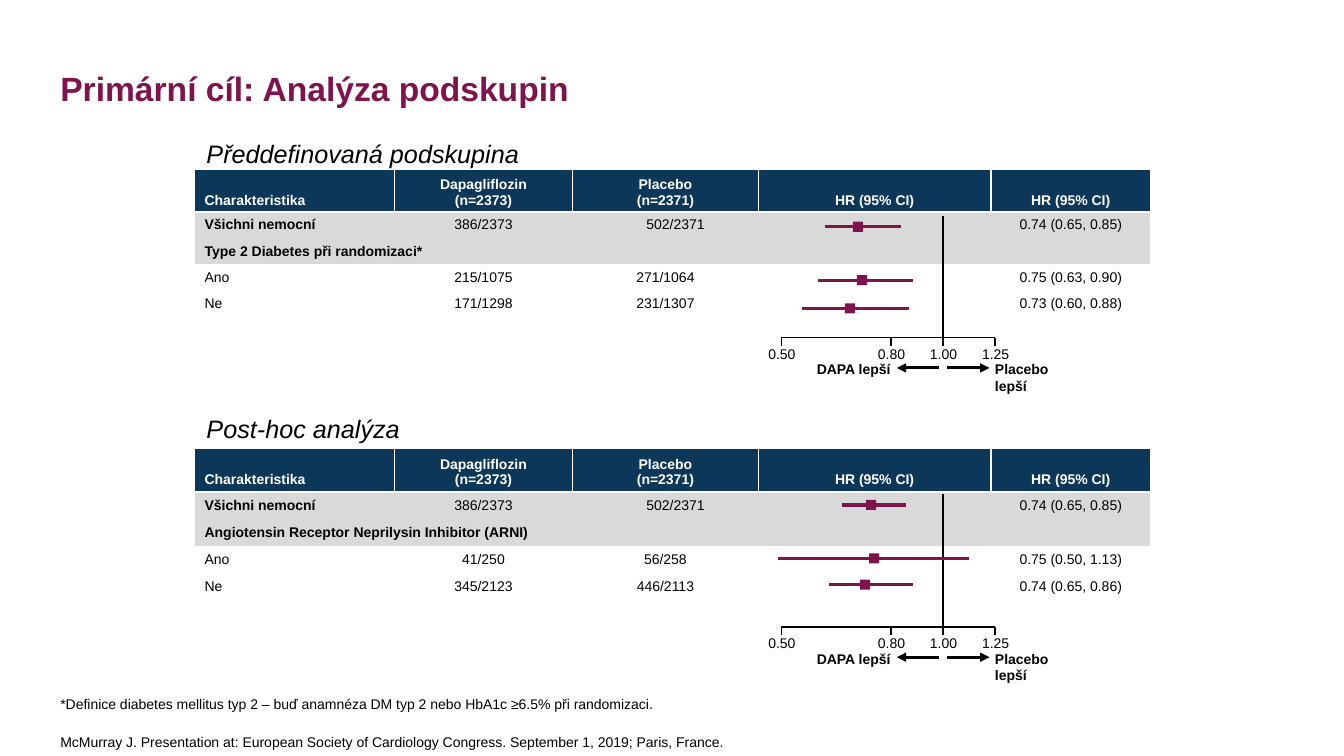
import math
from pptx import Presentation
from pptx.dml.color import RGBColor
from pptx.enum.shapes import MSO_CONNECTOR, MSO_SHAPE
from pptx.enum.text import MSO_ANCHOR, PP_ALIGN
from pptx.oxml.ns import qn
from pptx.util import Inches, Pt
from lxml import etree

STRAIGHT, RECTANGLE = MSO_CONNECTOR.STRAIGHT, MSO_SHAPE.RECTANGLE
TOP, MIDDLE, BOTTOM = MSO_ANCHOR.TOP, MSO_ANCHOR.MIDDLE, MSO_ANCHOR.BOTTOM
LEFT, CENTER, RIGHT = PP_ALIGN.LEFT, PP_ALIGN.CENTER, PP_ALIGN.RIGHT
BLACK = RGBColor(0x00, 0x00, 0x00)
WHITE = RGBColor(0xFF, 0xFF, 0xFF)
PLUM = RGBColor(0x7F, 0x13, 0x4C)
NAVY = RGBColor(0x0D, 0x37, 0x59)
GREY = RGBColor(0xD9, 0xD9, 0xD9)
FONT = "Arial"
PLAIN_TABLE = "{2D5ABB26-0587-4C30-8999-92F81FD0307C}"

TITLE = "Primární cíl: Analýza podskupin"
NOTES = [
    "*Definice diabetes mellitus typ 2 – buď anamnéza DM typ 2 nebo HbA1c ≥6.5% při randomizaci.",
    "McMurray J. Presentation at: European Society of Cardiology Congress. September 1, 2019; Paris, France.",
]
HEADER = ["Charakteristika", "Dapagliflozin\n(n=2373)", "Placebo\n(n=2371)",
          "HR (95% CI)", "", "HR (95% CI)"]
ALL_PATIENTS = ["Všichni nemocní", "386/2373", "502/2371", "", "", "0.74 (0.65, 0.85)"]
PANELS = [
    {
        "heading": "Předdefinovaná podskupina", "heading_top": 1.32,
        "top": 1.69, "rows": [0.4] + [0.26] * 4, "axis": 3.35,
        "group": "Type 2 Diabetes při randomizaci*",
        "results": [["Ano", "215/1075", "271/1064", "", "", "0.75 (0.63, 0.90)"],
                    ["Ne", "171/1298", "231/1307", "", "", "0.73 (0.60, 0.88)"]],
        "intervals": [(8.18, 8.51, 8.94, 2.25), (8.11, 8.55, 9.06, 2.78),
                      (7.95, 8.43, 9.02, 3.06)],
    },
    {
        "heading": "Post-hoc analýza", "heading_top": 4.05,
        "top": 4.45, "rows": [0.43] + [0.27] * 4, "axis": 6.22,
        "group": "Angiotensin Receptor Neprilysin Inhibitor (ARNI)",
        "results": [["Ano", "41/250", "56/258", "", "", "0.75 (0.50, 1.13)"],
                    ["Ne", "345/2123", "446/2113", "", "", "0.74 (0.65, 0.86)"]],
        "intervals": [(8.35, 8.64, 8.99, 5.01), (7.72, 8.67, 9.61, 5.54),
                      (8.22, 8.58, 9.06, 5.8)],
    },
]
COLUMNS = [1.98, 1.77, 1.84, 0.2, 2.11, 1.58]
MERGES = [(0, 3, 4), (1, 2, 3), (2, 0, 5), (3, 3, 4), (4, 3, 4)]
TABLE_LEFT = 1.93
TICKS = [0.5, 0.8, 1.0, 1.25]
AXIS_LEFT, AXIS_RIGHT = 7.75, 9.87
MARKER = 0.1


def write(frame, text, size=10, color=BLACK, bold=False, italic=False,
          align=LEFT, spacing=None, before=0, new=False):
    para = frame.add_paragraph() if new else frame.paragraphs[0]
    para.text = text
    para.alignment = align
    para.space_before = Pt(before)
    if spacing:
        para.line_spacing = spacing
    for span in para.runs:
        span.font.name = FONT
        span.font.size = Pt(size)
        span.font.bold = bold
        span.font.italic = italic
        span.font.color.rgb = color
    if not text:
        end = etree.SubElement(para._p, qn("a:endParaRPr"))
        end.set("sz", str(size * 100))


def add_text(page, area, text, anchor=TOP, wrap=False, **style):
    box = page.shapes.add_textbox(*map(Inches, area))
    frame = box.text_frame
    frame.word_wrap = wrap
    frame.vertical_anchor = anchor
    write(frame, text, **style)
    return frame


def add_line(page, start, end, color=BLACK, width=1, arrow=False):
    line = page.shapes.add_connector(STRAIGHT, *map(Inches, start + end))
    line.line.color.rgb = color
    line.line.width = Pt(width)
    if arrow:
        etree.SubElement(line.line._ln, qn("a:tailEnd")).set("type", "triangle")
    etree.SubElement(line._element.spPr, qn("a:effectLst"))


def add_borders(cell):
    for position, (side, width) in enumerate([("lnL", 1), ("lnR", 1), ("lnB", 2.25)]):
        border = etree.Element(qn("a:" + side), w=str(Pt(width)))
        fill = etree.SubElement(border, qn("a:solidFill"))
        etree.SubElement(fill, qn("a:srgbClr")).set("val", str(WHITE))
        cell._tc.get_or_add_tcPr().insert(position, border)


def add_results_table(page, panel):
    content = [HEADER, ALL_PATIENTS, [panel["group"]] + [""] * 5] + panel["results"]
    area = (TABLE_LEFT, panel["top"], sum(COLUMNS), sum(panel["rows"]))
    table = page.shapes.add_table(len(content), len(COLUMNS), *map(Inches, area)).table
    table._tbl.tblPr.find(qn("a:tableStyleId")).text = PLAIN_TABLE
    table.horz_banding = False
    for column, width in zip(table.columns, COLUMNS):
        column.width = Inches(width)
    for r, (texts, height) in enumerate(zip(content, panel["rows"])):
        table.rows[r].height = Inches(height)
        for c, text in enumerate(texts):
            cell = table.cell(r, c)
            cell.margin_top = cell.margin_bottom = Inches(0.04)
            cell.vertical_anchor = MIDDLE if r else BOTTOM
            write(cell.text_frame, text, color=BLACK if r else WHITE,
                  bold=r == 0 or (c == 0 and r < 3), align=CENTER if c else LEFT)
            if r < 3:
                cell.fill.solid()
                cell.fill.fore_color.rgb = GREY if r else NAVY
            else:
                cell.fill.background()
            if r == 0:
                add_borders(cell)
    for r, first, last in MERGES:
        table.cell(r, first).merge(table.cell(r, last))


def tick_position(value):
    share = math.log(value / TICKS[0]) / math.log(TICKS[-1] / TICKS[0])
    return AXIS_LEFT + share * (AXIS_RIGHT - AXIS_LEFT)


def add_axis(page, top, axis):
    unity = tick_position(1)
    add_line(page, (AXIS_LEFT, axis), (AXIS_RIGHT, axis))
    add_line(page, (unity, top + 0.45), (unity, axis))
    for value in TICKS:
        x = tick_position(value)
        add_line(page, (x, axis), (x, axis + 0.08))
        add_text(page, (x - 0.23, axis + 0.03, 0.47, 0.22), f"{value:.2f}", align=CENTER)
    add_text(page, (9.77, axis + 0.18, 1.08, 0.27), "Placebo lepší", bold=True)
    add_text(page, (7.98, axis + 0.18, 0.95, 0.27), "DAPA lepší", bold=True, align=RIGHT)
    for direction in (1, -1):
        add_line(page, (unity + direction * 0.04, axis + 0.3),
                 (unity + direction * 0.46, axis + 0.3), width=2.25, arrow=True)


def add_interval(page, low, middle, high, y):
    add_line(page, (low, y), (high, y), color=PLUM, width=2.25)
    area = (middle - MARKER / 2, y - MARKER / 2, MARKER, MARKER)
    marker = page.shapes.add_shape(RECTANGLE, *map(Inches, area))
    marker.shadow.inherit = False
    marker.fill.solid()
    marker.fill.fore_color.rgb = PLUM
    marker.line.fill.background()


def main():
    deck = Presentation()
    deck.slide_width, deck.slide_height = Inches(13.33), Inches(7.5)
    page = deck.slides.add_slide(deck.slide_layouts[6])
    add_text(page, (0.5, 0.25, 12.33, 0.88), TITLE, anchor=BOTTOM, wrap=True,
             size=24, color=PLUM, bold=True, spacing=0.9)
    notes = add_text(page, (0.5, 6.4, 11, 1.1), NOTES[0], anchor=BOTTOM, wrap=True,
                     spacing=0.9, before=3)
    write(notes, NOTES[1], spacing=0.9, before=16.5, new=True)
    for panel in PANELS:
        add_text(page, (1.95, panel["heading_top"], 3.3, 0.4), panel["heading"],
                 anchor=MIDDLE, wrap=True, size=18, italic=True)
        add_results_table(page, panel)
        add_axis(page, panel["top"], panel["axis"])
        for interval in panel["intervals"]:
            add_interval(page, *interval)
    deck.save("out.pptx")


if __name__ == "__main__":
    main()
